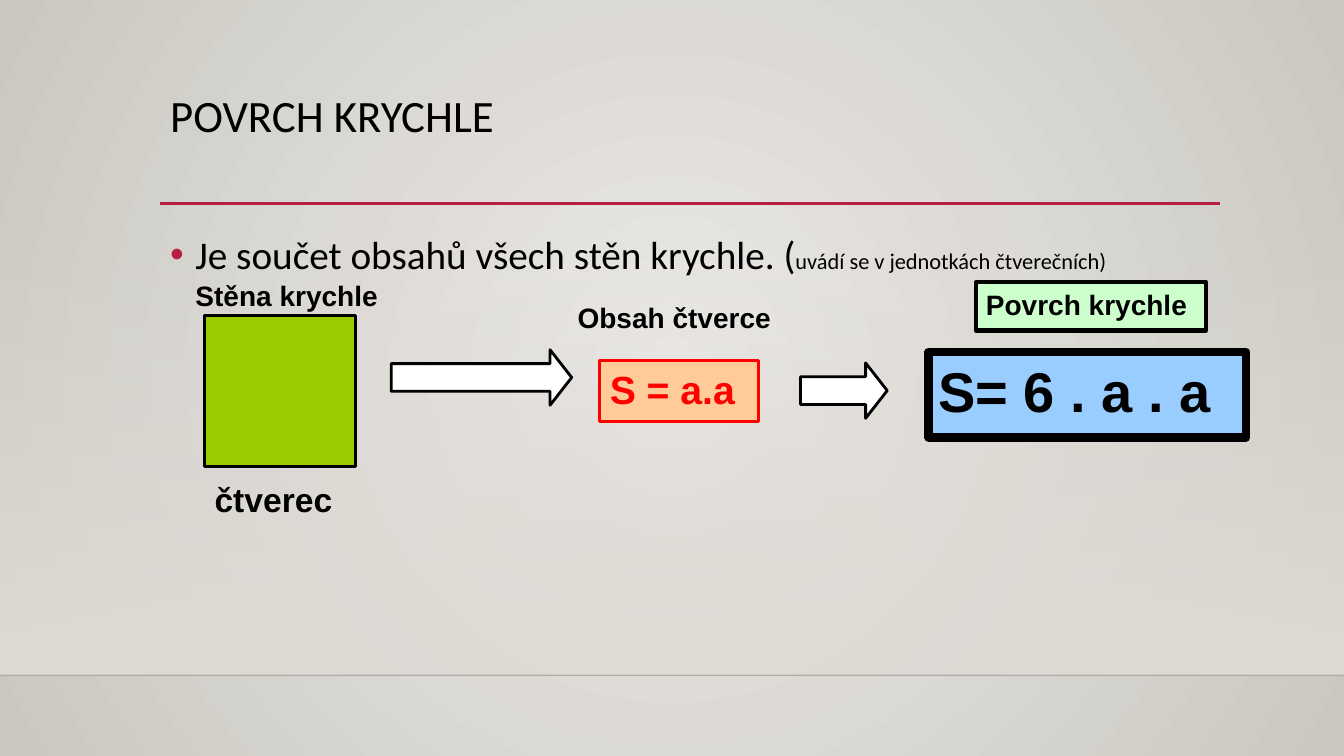
from lxml import etree
from pptx import Presentation
from pptx.dml.color import RGBColor
from pptx.enum.shapes import MSO_CONNECTOR, MSO_SHAPE
from pptx.enum.text import MSO_ANCHOR, PP_ALIGN
from pptx.oxml import parse_xml
from pptx.oxml.ns import nsdecls, qn
from pptx.util import Inches, Pt

RECTANGLE = MSO_SHAPE.RECTANGLE
RIGHT_ARROW = MSO_SHAPE.RIGHT_ARROW
STRAIGHT = MSO_CONNECTOR.STRAIGHT
TOP = MSO_ANCHOR.TOP
LEFT = PP_ALIGN.LEFT

WIDTH, HEIGHT = 13.33, 7.5
SHELF = 6.7
BLACK = "000000"
ACCENT = "B71E42"


def color(value):
    return RGBColor.from_string(value)


def gradient(stops, direction):
    marks = "".join(
        f'<a:gs pos="{place * 1000}"><a:srgbClr val="{tone}">'
        f'<a:alpha val="{alpha * 1000}"/></a:srgbClr></a:gs>'
        for place, tone, alpha in stops
    )
    return parse_xml(
        f'<a:gradFill {nsdecls("a")} rotWithShape="1">'
        f"<a:gsLst>{marks}</a:gsLst>{direction}</a:gradFill>"
    )


class SlideBuilder:
    """Holds the label style and the current slide, and adds elements to it."""

    label_font = "Arial"
    body_font = "Calibri"

    def __init__(self, page):
        self.page = page

    def background(self, inner, outer):
        fill = self.page.background.fill
        fill.solid()
        properties = self.page._element.cSld.find(qn("p:bg")).find(qn("p:bgPr"))
        circle = (
            '<a:path path="circle">'
            '<a:fillToRect l="50000" t="50000" r="50000" b="50000"/></a:path>'
        )
        stops = [(0, inner, 100), (100, outer, 100)]
        properties.replace(properties.find(qn("a:solidFill")), gradient(stops, circle))

    def shape(self, kind, left, top, width, height, fill=None, line=BLACK, weight=2):
        box = self.page.shapes.add_shape(
            kind, Inches(left), Inches(top), Inches(width), Inches(height)
        )
        box.shadow.inherit = False
        if fill:
            box.fill.solid()
            box.fill.fore_color.rgb = color(fill)
        if line:
            box.line.color.rgb = color(line)
            box.line.width = Pt(weight)
        else:
            box.line.fill.background()
        return box

    def fade(self, left, top, width, height, tone):
        box = self.shape(RECTANGLE, left, top, width, height, fill=tone, line=None)
        properties = box._element.spPr
        stops = [(0, tone, 0), (100, tone, 100)]
        down = '<a:lin ang="5400000" scaled="0"/>'
        properties.replace(properties.find(qn("a:solidFill")), gradient(stops, down))

    def arrow(self, left, top, width, height):
        arrow = self.shape(RIGHT_ARROW, left, top, width, height, fill="FFFFFF")
        arrow.adjustments[0] = 0.5
        arrow.adjustments[1] = 0.39

    def rule(self, left, right, top, tone, weight, alpha=100):
        rule = self.page.shapes.add_connector(
            STRAIGHT, Inches(left), Inches(top), Inches(right), Inches(top)
        )
        rule.line.color.rgb = color(tone)
        rule.line.width = Pt(weight)
        properties = rule._element.spPr
        if alpha < 100:
            shade = next(properties.iter(qn("a:srgbClr")))
            etree.SubElement(shade, qn("a:alpha")).set("val", str(alpha * 1000))
        etree.SubElement(properties, qn("a:effectLst"))

    def text_box(self, left, top, width, height):
        return self.page.shapes.add_textbox(
            Inches(left), Inches(top), Inches(width), Inches(height)
        )

    def add_text(self, box, *spans, font=label_font, tone=BLACK, bold=True,
                 spacing=1.0, bullet=None):
        frame = box.text_frame
        frame.word_wrap = True
        frame.vertical_anchor = TOP
        para = frame.paragraphs[0]
        para.alignment = LEFT
        para.line_spacing = spacing
        if bullet:
            properties = para._p.get_or_add_pPr()
            properties.set("marL", str(Inches(0.25)))
            properties.set("indent", str(-Inches(0.25)))
            shade = etree.SubElement(properties, qn("a:buClr"))
            etree.SubElement(shade, qn("a:srgbClr")).set("val", bullet)
            etree.SubElement(properties, qn("a:buFont")).set("typeface", "Arial")
            etree.SubElement(properties, qn("a:buChar")).set("char", "•")
        for text, size in spans:
            span = para.add_run()
            span.text = text
            span.font.name = font
            span.font.size = Pt(size)
            span.font.bold = bold
            span.font.color.rgb = color(tone)


def main():
    deck = Presentation()
    deck.slide_width = Inches(WIDTH)
    deck.slide_height = Inches(HEIGHT)
    builder = SlideBuilder(deck.slides.add_slide(deck.slide_layouts[6]))

    builder.background("ECEAE7", "CAC7C1")
    builder.fade(0, 2.21, WIDTH, SHELF - 2.21, "DFDBD5")
    builder.rule(0, WIDTH, SHELF, "000001", 1, alpha=20)
    builder.rule(1.59, 12.1, 2.02, ACCENT, 2.5)

    title = builder.text_box(1.59, 0.88, 10.5, 0.76)
    builder.add_text(title, ("POVRCH KRYCHLE", 32), font=builder.body_font,
                     bold=False, spacing=0.9)
    body = builder.text_box(1.59, 2.14, 10.5, 3.77)
    builder.add_text(body, ("Je součet obsahů všech stěn krychle. (", 28),
                     ("uvádí se v jednotkách čtverečních)", 16),
                     font=builder.body_font, bold=False, spacing=1.2, bullet=ACCENT)

    builder.shape(RECTANGLE, 2.03, 3.13, 1.5, 1.5, fill="99CC00", weight=2.25)
    builder.arrow(3.88, 3.47, 1.79, 0.55)
    builder.arrow(7.94, 3.6, 0.86, 0.55)

    labels = [
        ("Obsah čtverce", 20, (5.63, 2.93, 2.18, 0.43)),
        ("Stěna krychle", 20, (1.84, 2.71, 2.18, 0.43)),
        ("čtverec", 24, (2.03, 4.7, 1.5, 0.5)),
    ]
    for text, size, place in labels:
        builder.add_text(builder.text_box(*place), (text, size))

    formulas = [
        ("S = a.a", 28, (5.95, 3.58, 1.57, 0.6), "FFCC99", "FF0000", 2),
        ("S= 6 . a . a", 40, (9.21, 3.49, 3.15, 0.85), "99CCFF", BLACK, 6),
        ("Povrch krychle", 20, (9.68, 2.8, 2.28, 0.48), "CCFFCC", BLACK, 3),
    ]
    for text, size, place, fill, tone, weight in formulas:
        box = builder.shape(RECTANGLE, *place, fill=fill, line=tone, weight=weight)
        builder.add_text(box, (text, size), tone=tone)

    deck.save("out.pptx")


if __name__ == "__main__":
    main()
